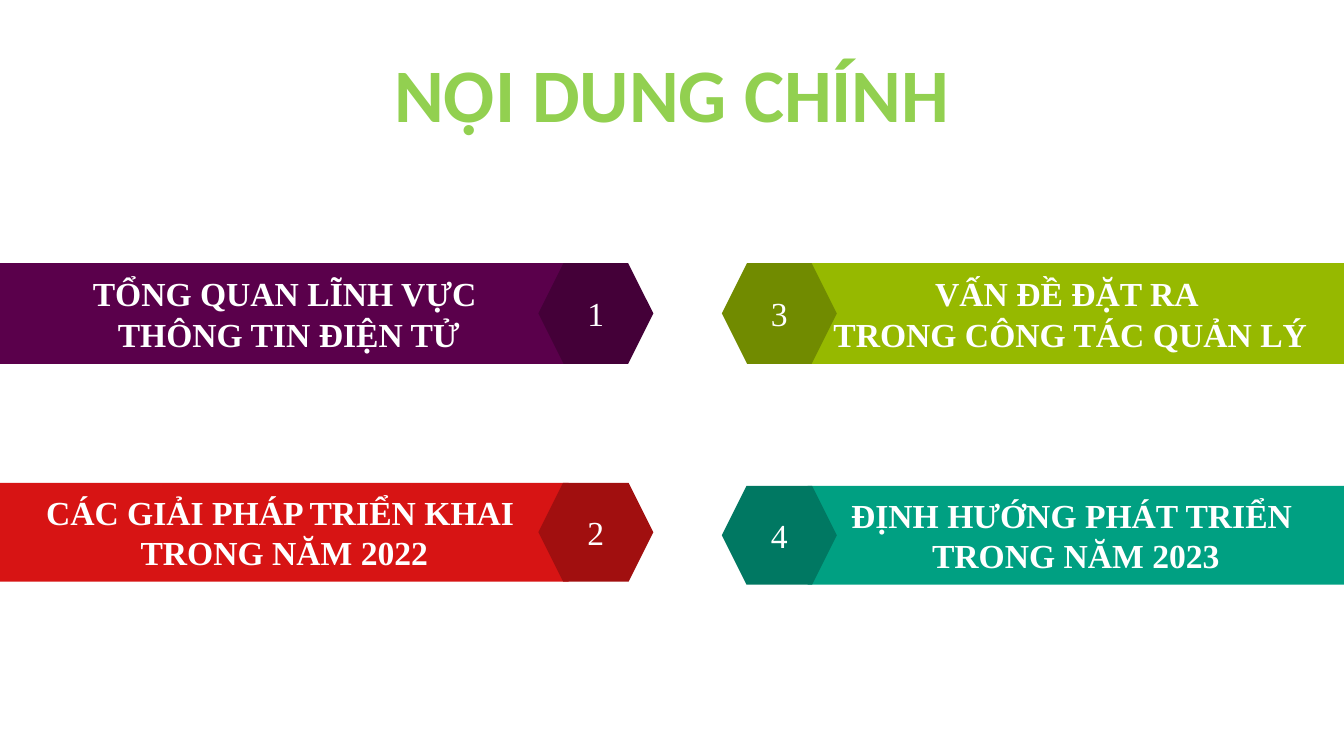
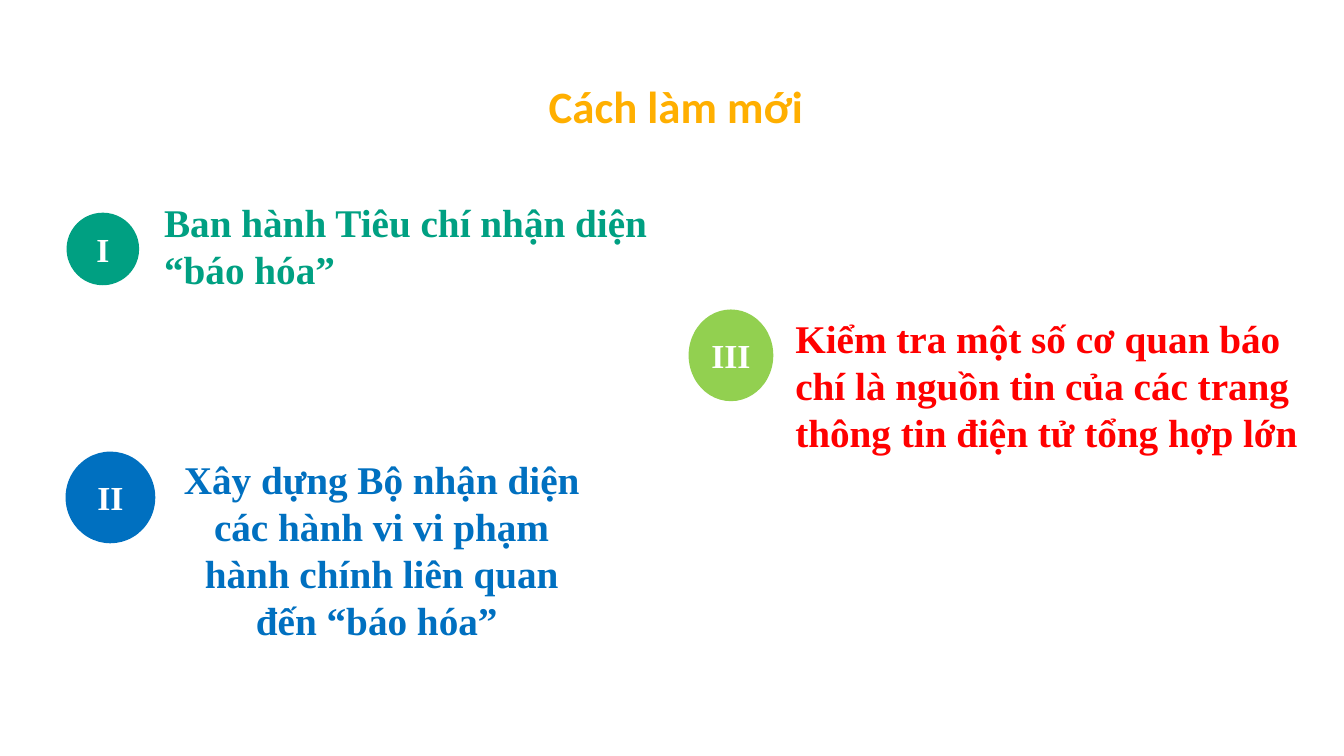
from pptx import Presentation
from pptx.dml.color import RGBColor
from pptx.enum.shapes import MSO_SHAPE
from pptx.enum.text import MSO_ANCHOR, MSO_AUTO_SIZE, PP_ALIGN
from pptx.util import Inches, Pt

RECTANGLE, HEXAGON, OVAL = MSO_SHAPE.RECTANGLE, MSO_SHAPE.HEXAGON, MSO_SHAPE.OVAL
TOP, MIDDLE = MSO_ANCHOR.TOP, MSO_ANCHOR.MIDDLE
LEFT, CENTER = PP_ALIGN.LEFT, PP_ALIGN.CENTER
NO_FIT = MSO_AUTO_SIZE.NONE

SLIDE_WIDTH, SLIDE_HEIGHT = 13.33, 7.5
TITLE_FONT, BODY_FONT = "Calibri", "Times New Roman"
TITLE_ONLY = 5
HEXAGON_WIDTH = 1.14
HEXAGON_LEFT = {"left": 5.34, "right": 7.16}

COLORS = {
    "white": "FFFFFF",
    "purple": "5A004B", "dark purple": "440038",
    "crimson": "D71414", "dark crimson": "A10F0F",
    "olive": "96B900", "dark olive": "718B00",
    "teal": "00A082", "dark teal": "007862",
    "green": "92D050", "orange": "FFAF00",
    "blue": "0070C0", "red": "FF0000",
}

AGENDA_TITLE = ("NỘI DUNG CHÍNH", (2.82, 0.42, 7.69, 1.01), 54, "green")
AGENDA = [
    ("1", ["TỔNG QUAN LĨNH VỰC ", "THÔNG TIN ĐIỆN TỬ"], "purple", "left", 2.61, 5.73, 1),
    ("2", ["CÁC GIẢI PHÁP TRIỂN KHAI ", "TRONG NĂM 2022"], "crimson", "left", 4.79, 5.64, 0.98),
    ("3", ["VẤN ĐỀ ĐẶT RA ", "TRONG CÔNG TÁC QUẢN LÝ"], "olive", "right", 2.61, 5.43, 1),
    ("4", ["ĐỊNH HƯỚNG PHÁT TRIỂN ", "TRONG NĂM 2023"], "teal", "right", 4.82, 5.32, 0.98),
]

METHODS_TITLE = ("Cách làm mới", (1.72, 0.73, 9.97, 0.64), 32, "orange")
METHODS = [
    ("I", "Ban hành Tiêu chí nhận diện “báo hóa”", "teal", "teal", LEFT,
     (0.66, 2.11, 0.72, 0.72), (1.53, 1.92, 5.3, 1.04)),
    ("II", "Xây dựng Bộ nhận diện các hành vi vi phạm hành chính liên quan đến “báo hóa” ",
     "blue", "blue", CENTER, (0.65, 4.48, 0.89, 0.91), (1.67, 4.47, 4.23, 1.99)),
    ("III", "Kiểm tra một số cơ quan báo chí là nguồn tin của các trang thông tin điện tử tổng hợp lớn",
     "green", "red", LEFT, (6.83, 3.07, 0.84, 0.91), (7.79, 3.07, 5.3, 1.51)),
]


def rgb(name):
    return RGBColor.from_string(COLORS[name])


def write(box, lines, size=24, font=BODY_FONT, color="white", bold=True,
          align=CENTER, anchor=MIDDLE):
    frame = box.text_frame
    frame.word_wrap = True
    frame.auto_size = NO_FIT
    frame.vertical_anchor = anchor
    for index, line in enumerate(lines):
        para = frame.add_paragraph() if index else frame.paragraphs[0]
        para.alignment = align
        span = para.add_run()
        span.text = line
        span.font.name = font
        span.font.size = Pt(size)
        span.font.bold = bold
        span.font.color.rgb = rgb(color)


def add_filled(group, kind, place, fill, lines, bold=True):
    shape = group.shapes.add_shape(kind, *map(Inches, place))
    shape.shadow.inherit = False
    shape.fill.solid()
    shape.fill.fore_color.rgb = rgb(fill)
    shape.line.fill.background()
    write(shape, lines, bold=bold)


def add_page(deck, text, place, size, color):
    page = deck.slides.add_slide(deck.slide_layouts[TITLE_ONLY])
    title = page.shapes.title
    title.left, title.top, title.width, title.height = map(Inches, place)
    write(title, [text], size=size, font=TITLE_FONT, color=color, anchor=TOP)
    return page


def build_agenda(deck):
    page = add_page(deck, *AGENDA_TITLE)
    for number, lines, color, side, top, width, height in AGENDA:
        group = page.shapes.add_group_shape()
        left = 0 if side == "left" else SLIDE_WIDTH - width
        add_filled(group, RECTANGLE, (left, top, width, height), color, lines)
        add_filled(group, HEXAGON, (HEXAGON_LEFT[side], top, HEXAGON_WIDTH, height),
                   f"dark {color}", [number], bold=False)


def build_methods(deck):
    page = add_page(deck, *METHODS_TITLE)
    for numeral, text, fill, color, align, badge_place, text_place in METHODS:
        group = page.shapes.add_group_shape()
        add_filled(group, OVAL, badge_place, fill, [numeral])
        box = group.shapes.add_textbox(*map(Inches, text_place))
        write(box, [text], size=28, color=color, align=align, anchor=TOP)


def main():
    deck = Presentation()
    deck.slide_width = Inches(SLIDE_WIDTH)
    deck.slide_height = Inches(SLIDE_HEIGHT)
    build_agenda(deck)
    build_methods(deck)
    deck.save("out.pptx")


if __name__ == "__main__":
    main()
